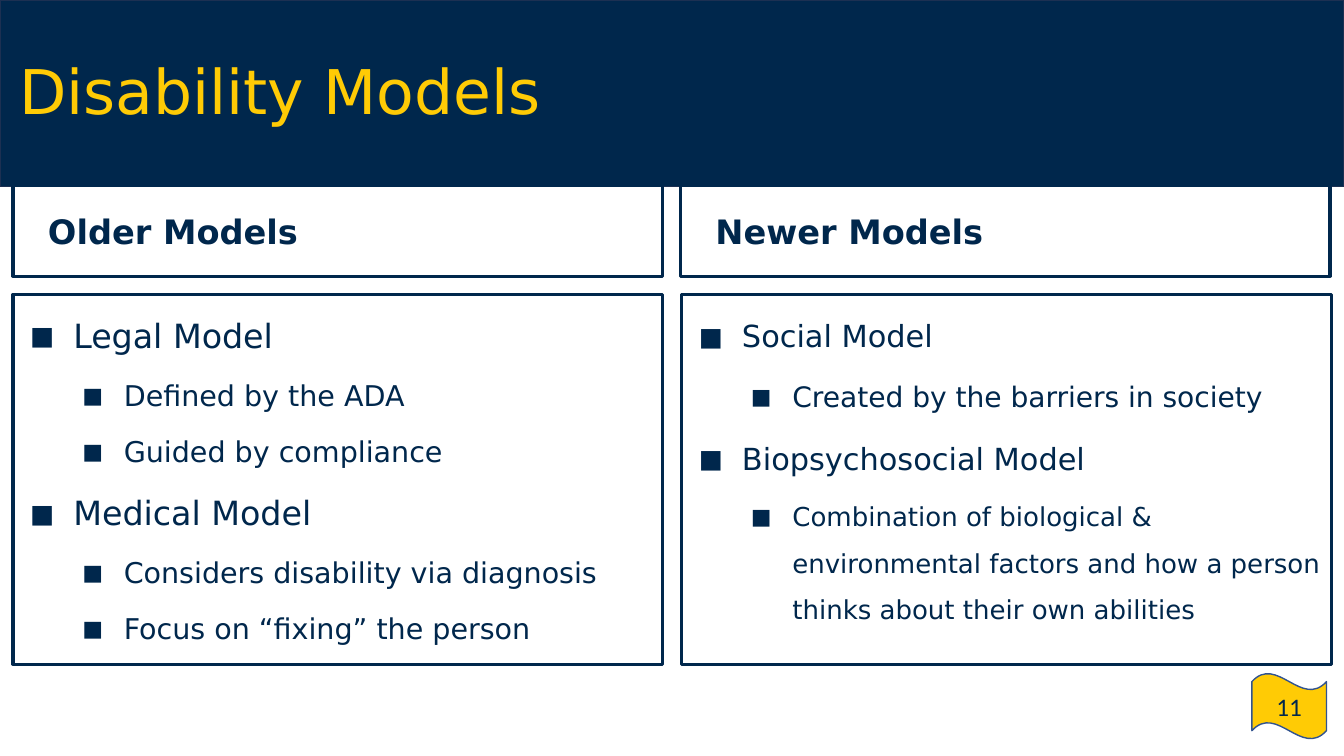
from lxml import etree
from pptx import Presentation
from pptx import util as u
from pptx.dml.color import RGBColor
from pptx.enum import shapes, text
from pptx.oxml.ns import qn

NAVY, MAIZE = "00274C", "FFCB05"
FONT = "DejaVu Sans"


def add_box(preset, left, top, width, height, fill, line, line_width):
    """Add an unshadowed shape, placed in centimetres, that wraps its text."""
    box = slide.shapes.add_shape(
        preset, u.Cm(left), u.Cm(top), u.Cm(width), u.Cm(height))
    box.shadow.inherit = False
    if fill:
        box.fill.solid()
        box.fill.fore_color.rgb = RGBColor.from_string(fill)
    else:
        box.fill.background()
    box.line.color.rgb = RGBColor.from_string(line)
    box.line.width = u.Pt(line_width)
    box.text_frame.word_wrap = True
    return box


def add_run(paragraph, words, size, color=NAVY, font=FONT, bold=False):
    run = paragraph.add_run()
    run.text = words
    run.font.size = u.Pt(size)
    run.font.name = font
    run.font.bold = bold
    run.font.color.rgb = RGBColor.from_string(color)


prs = Presentation()
prs.slide_width, prs.slide_height = u.Cm(33.87), u.Cm(19.05)
slide = prs.slides.add_slide(prs.slide_layouts[5])

# Banner, page flag and title
add_box(shapes.MSO_SHAPE.RECTANGLE, 0, 0, 33.87, 4.7, NAVY, "1C3052", 1)

flag = add_box(shapes.MSO_SHAPE.WAVE, 31.55, 16.97, 1.88, 1.65, MAIZE, "31538F", 1)
flag.text_frame.vertical_anchor = text.MSO_ANCHOR.MIDDLE
page_number = flag.text_frame.paragraphs[0]
page_number.alignment = text.PP_ALIGN.CENTER
add_run(page_number, "11", 18, font="Calibri")

title = slide.shapes.title
title.left, title.top = u.Cm(0.23), u.Cm(0.53)
title.width, title.height = u.Cm(29.21), u.Cm(3.68)
title.text_frame.auto_size = text.MSO_AUTO_SIZE.NONE
title.text_frame.vertical_anchor = text.MSO_ANCHOR.MIDDLE
heading = title.text_frame.paragraphs[0]
heading.alignment = text.PP_ALIGN.LEFT
heading.line_spacing = 0.9
add_run(heading, "Disability Models", 44, MAIZE)
title.element.getparent().append(title.element)  # in front of the banner

# Columns: heading, heading left, list left, line spacing, items
# Items: level, words, size, bullet percent
columns = [
    ("Older Models", 0.33, 0.33, 1.4, [
        (0, "Legal Model", 23.8, 118),
        (1, "Defined by the ADA", 20.4, 118),
        (1, "Guided by compliance", 20.4, 118),
        (0, "Medical Model", 23.8, 118),
        (1, "Considers disability via diagnosis", 20.4, 118),
        (1, "Focus on “fixing” the person", 20.4, 118),
    ]),
    ("Newer Models", 17.15, 17.18, 1.5, [
        (0, "Social Model", 21.7, 129),
        (1, "Created by the barriers in society", 20.1, 119),
        (0, "Biopsychosocial Model", 21.7, 129),
        (1, "Combination of biological & environmental factors and how a "
            "person thinks about their own abilities", 18.6, 129),
    ]),
]
HANGING = [1.12, 1.07]

for era, era_left, models_left, spacing, items in columns:
    era_box = add_box(shapes.MSO_SHAPE.RECTANGLE,
                      era_left, 4.67, 16.37, 2.29, None, NAVY, 2.25)
    era_box.text_frame.vertical_anchor = text.MSO_ANCHOR.MIDDLE
    era_line = era_box.text_frame.paragraphs[0]
    era_line.alignment = text.PP_ALIGN.LEFT
    era_line.space_before = u.Pt(18)
    indents = era_line._p.get_or_add_pPr()
    indents.set("marL", str(u.Cm(1.27)))
    indents.set("indent", str(-u.Cm(0.64)))
    add_run(era_line, era, 24, bold=True)

    models = add_box(shapes.MSO_SHAPE.RECTANGLE,
                     models_left, 7.42, 16.37, 9.32, None, NAVY, 2.25).text_frame
    models.vertical_anchor = text.MSO_ANCHOR.TOP
    for index, (level, words, size, bullet_percent) in enumerate(items):
        item = models.add_paragraph() if index else models.paragraphs[0]
        item.alignment = text.PP_ALIGN.LEFT
        item.level = level
        item.line_spacing = spacing
        item.space_before = u.Pt(6 if index else 0)
        item.space_after = u.Pt(6 if index == len(items) - 1 else 0)
        props = item._p.get_or_add_pPr()
        props.set("marL", str(u.Cm(1.27 * (level + 1))))
        props.set("indent", str(-u.Cm(HANGING[level])))
        bullet_color = etree.SubElement(props, qn("a:buClr"))
        etree.SubElement(bullet_color, qn("a:srgbClr"), val=NAVY)
        etree.SubElement(props, qn("a:buSzPct"), val=str(bullet_percent * 1000))
        etree.SubElement(props, qn("a:buFont"), typeface=FONT)
        etree.SubElement(props, qn("a:buChar"), char="▪")
        add_run(item, words, size)

prs.save("out.pptx")
